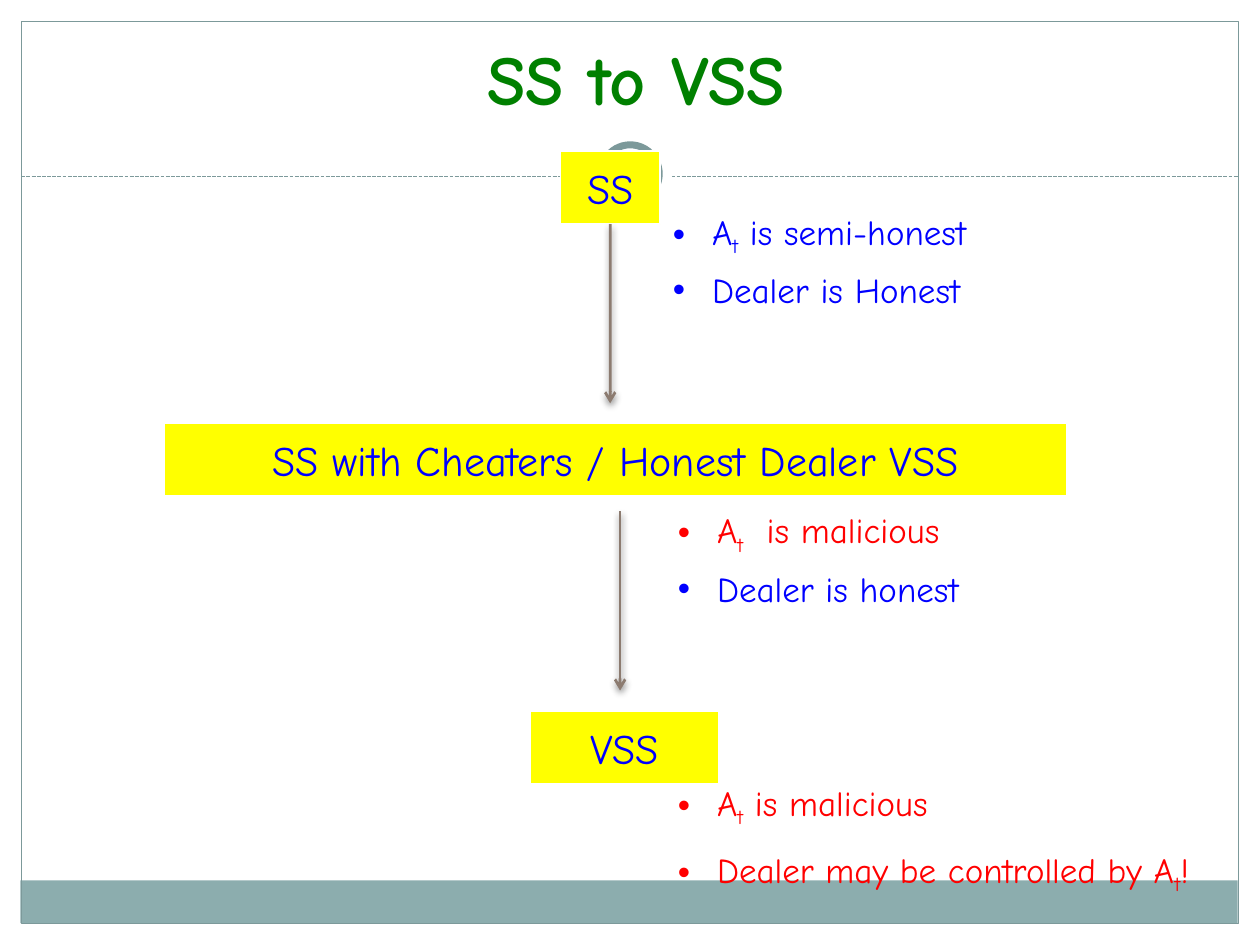
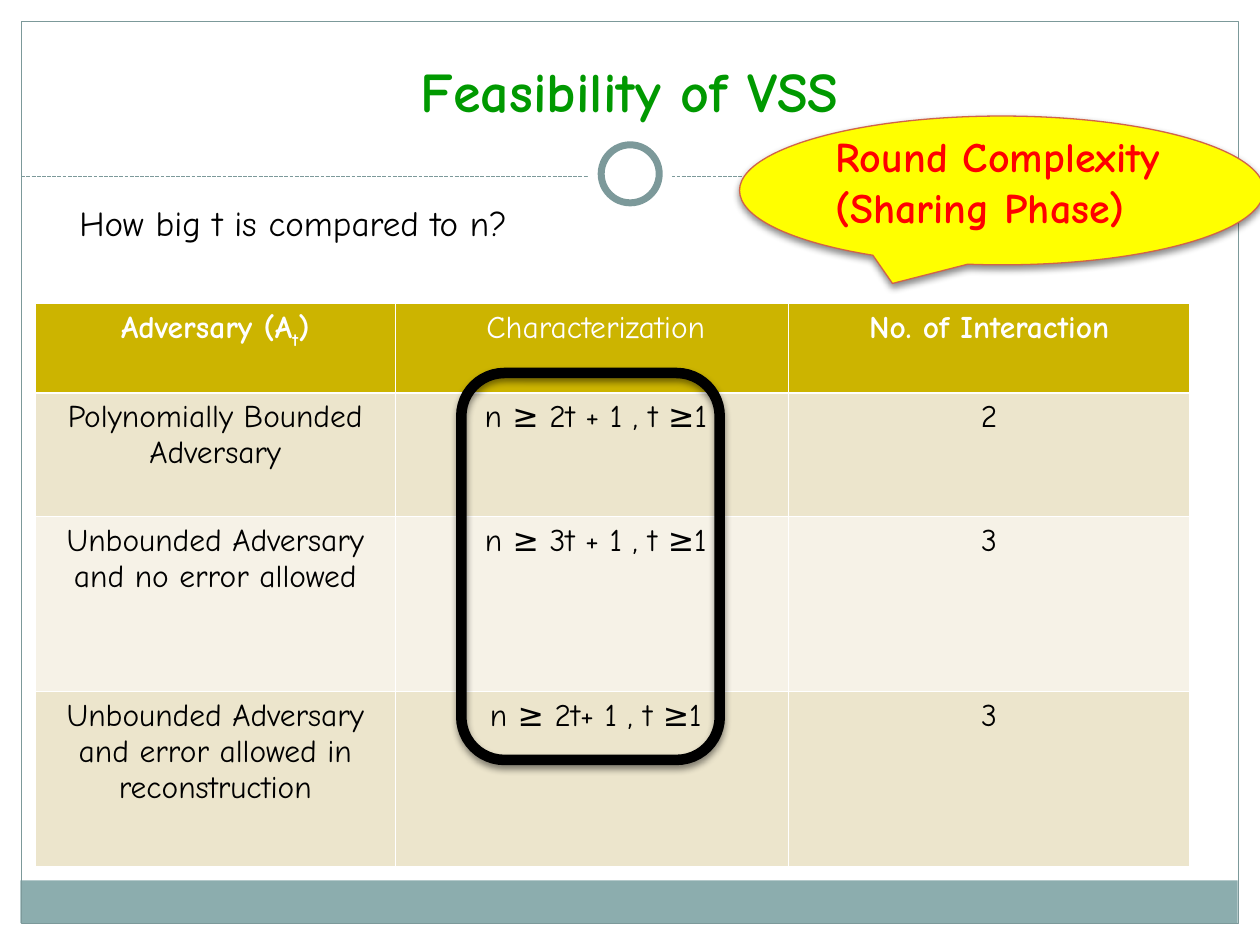
from dataclasses import dataclass

from lxml import etree
from pptx import Presentation
from pptx.dml.color import RGBColor
from pptx.enum.dml import MSO_LINE
from pptx.enum.shapes import MSO_CONNECTOR, MSO_SHAPE
from pptx.enum.text import MSO_ANCHOR, MSO_AUTO_SIZE, PP_ALIGN
from pptx.oxml.ns import qn
from pptx.util import Cm, Pt

RECT = MSO_SHAPE.RECTANGLE
ROUND_RECT = MSO_SHAPE.ROUNDED_RECTANGLE
OVAL = MSO_SHAPE.OVAL
CALLOUT = MSO_SHAPE.OVAL_CALLOUT
STRAIGHT = MSO_CONNECTOR.STRAIGHT
DASH = MSO_LINE.SQUARE_DOT
TOP, MIDDLE, BOTTOM = MSO_ANCHOR.TOP, MSO_ANCHOR.MIDDLE, MSO_ANCHOR.BOTTOM
LEFT, CENTER = PP_ALIGN.LEFT, PP_ALIGN.CENTER
NO_FIT = MSO_AUTO_SIZE.NONE
SIDE_BOTTOM = 2
TITLE_ONLY, COMPARISON = 5, 4


@dataclass(frozen=True)
class Theme:
    font: str = "Comic Neue"
    white: str = "FFFFFF"
    black: str = "000000"
    blue: str = "0000FF"
    red: str = "FF0000"
    yellow: str = "FFFF00"
    dark_green: str = "008000"
    green: str = "009900"
    band: str = "8CADAE"
    frame: str = "7C999A"
    arrow: str = "8C7B70"
    callout_line: str = "D16349"
    header: str = "CCB400"
    stripes: tuple = ("ECE5CC", "F6F2E7")
    big_title: int = 40
    title: int = 32
    label: int = 24
    body: int = 20
    cell: int = 18


class Deck:
    def __init__(self, theme):
        self.theme = theme
        self.prs = Presentation()
        self.prs.slide_width, self.prs.slide_height = Cm(25.4), Cm(19.05)
        self.s = None

    def slide(self, layout, title, box, size, color):
        self.s = self.prs.slides.add_slide(self.prs.slide_layouts[layout])
        self.frame()
        sp = self.s.shapes.title
        self.placeholder(sp, box, BOTTOM)
        self.fill_paragraph(sp.text_frame.paragraphs[0], title, size, color, True, CENTER)

    def frame(self):
        t = self.theme
        self.shape(RECT, (0.41, 17.75, 24.54, 0.86), t.band)
        self.shape(RECT, (0.43, 0.43, 24.54, 18.19), None, t.frame, 0.75)
        self.line((0.43, 3.56), (24.97, 3.56), t.frame, 0.75).line.dash_style = DASH
        self.shape(OVAL, (11.85, 2.67, 1.7, 1.7), t.white)
        self.shape(OVAL, (12.12, 2.92, 1.17, 1.17), t.white, t.frame, 4)

    def placeholder(self, sp, box, anchor):
        sp.left, sp.top, sp.width, sp.height = map(Cm, box)
        self.s.shapes._spTree.append(sp._element)
        tf = sp.text_frame
        tf.auto_size, tf.vertical_anchor, tf.word_wrap = NO_FIT, anchor, True

    def fill_paragraph(self, p, text, size, color, bold=False, align=LEFT):
        p.alignment = align
        for i, part in enumerate(text.split("~")):
            r = p.add_run()
            r.text = part
            r.font.name, r.font.size, r.font.bold = self.theme.font, Pt(size), bold
            r.font.color.rgb = RGBColor.from_string(color)
            if i % 2:
                r._r.get_or_add_rPr().set("baseline", "-25000")

    def shape(self, kind, box, fill=None, line=None, width=1, shadow=False):
        sp = self.s.shapes.add_shape(kind, *map(Cm, box))
        sp.shadow.inherit = False
        if fill:
            sp.fill.solid()
            sp.fill.fore_color.rgb = RGBColor.from_string(fill)
        else:
            sp.fill.background()
        if line:
            sp.line.color.rgb = RGBColor.from_string(line)
            sp.line.width = Pt(width)
        else:
            sp.line.fill.background()
        if shadow:
            self.cast_shadow(sp._element.spPr.find(qn("a:effectLst")))
        return sp

    def cast_shadow(self, effects):
        shadow = etree.SubElement(effects, qn("a:outerShdw"), blurRad=str(Pt(4)),
                                  dist=str(Pt(2)), dir="5400000", rotWithShape="0")
        color = etree.SubElement(shadow, qn("a:srgbClr"), val=self.theme.black)
        etree.SubElement(color, qn("a:alpha"), val="45000")

    def line(self, start, end, color, width, shadow=False):
        ln = self.s.shapes.add_connector(STRAIGHT, *map(Cm, start + end))
        ln.line.color.rgb = RGBColor.from_string(color)
        ln.line.width = Pt(width)
        effects = etree.SubElement(ln._element.spPr, qn("a:effectLst"))
        if shadow:
            self.cast_shadow(effects)
        return ln

    def arrow(self, x, top, bottom):
        ln = self.line((x, top), (x, bottom), self.theme.arrow, 1.57, True)
        etree.SubElement(ln.line._get_or_add_ln(), qn("a:tailEnd"), type="arrow")
        return ln

    def stage(self, text, left, top, width):
        t = self.theme
        sp = self.shape(RECT, (left, top, width, 1.47), t.yellow, t.white)
        tf = sp.text_frame
        tf.word_wrap, tf.vertical_anchor = False, MIDDLE
        self.fill_paragraph(tf.paragraphs[0], text, t.label, t.blue, align=CENTER)
        return sp

    def bullets(self, idx, left, top, gap, items):
        sp = self.s.placeholders[idx]
        self.placeholder(sp, (left, top, 11.9, 2.1), TOP)
        tf = sp.text_frame
        for i, (text, color) in enumerate(items):
            p = tf.add_paragraph() if i else tf.paragraphs[0]
            p.space_before = Pt(gap if i else 0)
            self.fill_paragraph(p, text, self.theme.body, color)
            pPr = p._p.get_or_add_pPr()
            pPr.set("marL", str(Cm(0.79)))
            pPr.set("indent", str(-Cm(0.79)))
            etree.SubElement(pPr, qn("a:buFont"), typeface="Arial")
            etree.SubElement(pPr, qn("a:buChar"), char="•")

    def text(self, box, lines, size, color, bold=False):
        tf = self.s.shapes.add_textbox(*map(Cm, box)).text_frame
        tf.word_wrap = True
        for i, text in enumerate(lines):
            p = tf.add_paragraph() if i else tf.paragraphs[0]
            self.fill_paragraph(p, text, size, color, bold)

    def table(self, left, top, widths, heights, rows, plain_headers=()):
        t = self.theme
        tbl = self.s.shapes.add_table(len(rows), len(widths), Cm(left), Cm(top),
                                      Cm(sum(widths)), Cm(sum(heights))).table
        for col, width in zip(tbl.columns, widths):
            col.width = Cm(width)
        for i, (row, height) in enumerate(zip(rows, heights)):
            tbl.rows[i].height = Cm(height)
            fill = t.stripes[(i - 1) % 2] if i else t.header
            color = t.black if i else t.white
            for j, text in enumerate(row):
                cell = tbl.cell(i, j)
                self.borders(cell)
                cell.fill.solid()
                cell.fill.fore_color.rgb = RGBColor.from_string(fill)
                bold = i == 0 and text not in plain_headers
                p = cell.text_frame.paragraphs[0]
                self.fill_paragraph(p, text, t.cell, color, bold, CENTER)

    def borders(self, cell):
        tcPr = cell._tc.get_or_add_tcPr()
        for side in ("a:lnL", "a:lnR", "a:lnT", "a:lnB"):
            ln = etree.SubElement(tcPr, qn(side), w=str(Pt(1)))
            fill = etree.SubElement(ln, qn("a:solidFill"))
            etree.SubElement(fill, qn("a:srgbClr"), val=self.theme.white)

    def drop_empty_placeholders(self):
        for sp in list(self.s.placeholders):
            if not sp.text_frame.text:
                sp._element.getparent().remove(sp._element)


def ss_to_vss(deck):
    t = deck.theme
    deck.slide(COMPARISON, "SS to VSS", (1.19, 0.2, 23.27, 2.34), t.big_title, t.dark_green)
    ss = deck.stage("SS", 11.3, 3.05, 2.01)
    deck.stage("SS with Cheaters / Honest Dealer VSS", 3.3, 8.53, 18.21)
    deck.stage("VSS", 10.69, 14.33, 3.81)
    deck.arrow(12.3, 4.52, 8.13).begin_connect(ss, SIDE_BOTTOM)
    deck.arrow(12.5, 10.31, 13.92)
    deck.bullets(1, 13.31, 4.11, 6, [("A~t~ is semi-honest", t.blue),
                                     ("Dealer is Honest", t.blue)])
    deck.bullets(2, 13.41, 10.13, 6, [("A~t~  is malicious", t.red),
                                      ("Dealer is honest", t.blue)])
    deck.bullets(3, 13.41, 15.62, 11, [("A~t~ is malicious", t.red),
                                       ("Dealer may be controlled by A~t~!", t.red)])
    deck.drop_empty_placeholders()


def feasibility(deck):
    t = deck.theme
    deck.slide(TITLE_ONLY, "Feasibility of VSS", (1.27, 0.66, 22.86, 1.96), t.title, t.green)
    deck.shape(CALLOUT, (14.91, 2.34, 10.57, 3), t.yellow, t.callout_line, 0.75, True)
    deck.text((1.35, 3.94, 11.96, 1.12), ["How big t is compared to n?"], t.body, t.black)
    top, heights = 6.12, (1.8, 2.49, 3.53, 3.53)
    deck.table(0.71, top, (7.26, 8.08), heights, [
        ("Adversary (A~t~)", "Characterization"),
        ("Polynomially Bounded Adversary", "n ≥ 2t + 1 , t ≥1"),
        ("Unbounded Adversary and no error allowed", "n ≥ 3t + 1 , t ≥1"),
        ("Unbounded Adversary and error allowed in reconstruction", "n ≥ 2t+ 1 , t ≥1"),
    ], plain_headers=("Characterization",))
    deck.text((16.59, 2.51, 7.7, 2.31), ["Round Complexity", "(Sharing Phase)"],
              t.label, t.red, True)
    deck.table(15.9, top, (8.08,), heights, [("No. of Interaction",), ("2",), ("3",), ("3",)])
    deck.shape(ROUND_RECT, (9.3, 7.52, 5.21, 7.8), None, t.black, 6, True)


def main():
    deck = Deck(Theme())
    ss_to_vss(deck)
    feasibility(deck)
    deck.prs.save("out.pptx")


if __name__ == "__main__":
    main()
